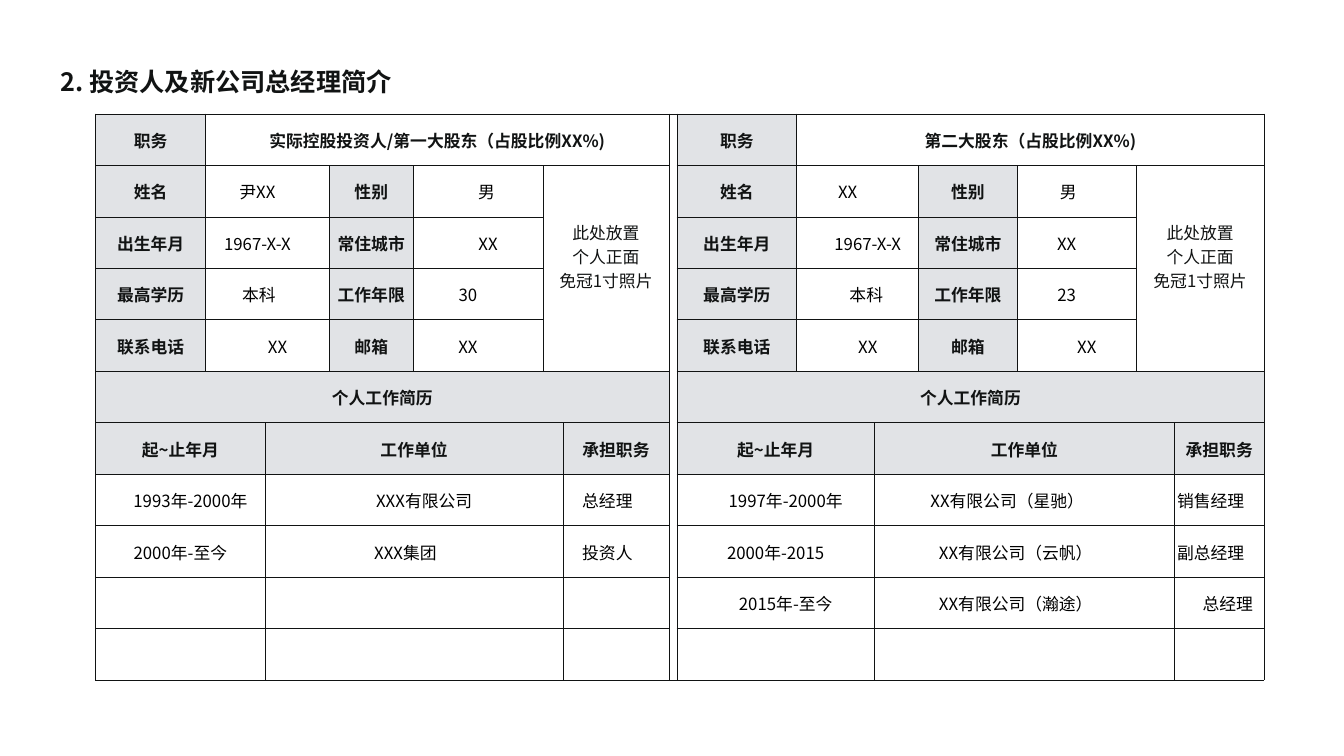
from lxml import etree
from pptx import Presentation
from pptx.dml.color import RGBColor
from pptx.enum.text import MSO_ANCHOR, PP_ALIGN
from pptx.oxml.ns import qn
from pptx.util import Inches, Pt

MIDDLE = MSO_ANCHOR.MIDDLE
LEFT, CENTER = PP_ALIGN.LEFT, PP_ALIGN.CENTER
INK = RGBColor(0x11, 0x13, 0x13)
BLACK = RGBColor(0, 0, 0)
WHITE = RGBColor(255, 255, 255)
GREY = RGBColor(0xE1, 0xE3, 0xE6)
FONT = "Noto Sans CJK SC"

TITLE = "2. 投资人及新公司总经理简介"
PHOTO_NOTE = ["此处放置", "个人正面", "免冠1寸照片"]
FIELD_LABELS = [("姓名", "性别"), ("出生年月", "常住城市"), ("最高学历", "工作年限"), ("联系电话", "邮箱")]
CAREER_TITLE = "个人工作简历"
CAREER_HEADERS = ["起~止年月", "工作单位", "承担职务"]

PEOPLE = [
    {
        "role": "实际控股投资人/第一大股东（占股比例XX%)",
        "fields": [
            (("尹XX", -0.2), ("男", 0.17)),
            (("1967-X-X", -0.2), ("XX", 0.2)),
            (("本科", -0.17), ("30", -0.2)),
            (("XX", 0.2), ("XX", -0.2)),
        ],
        "career": [
            (("1993年-2000年", 0.2), ("XXX有限公司", 0.2), ("总经理", -0.17)),
            (("2000年-至今", 0), ("XXX集团", -0.17), ("投资人", -0.17)),
        ],
    },
    {
        "role": "第二大股东（占股比例XX%)",
        "fields": [
            (("XX", -0.2), ("男", -0.17)),
            (("1967-X-X", 0.2), ("XX", -0.2)),
            (("本科", 0.17), ("23", -0.2)),
            (("XX", 0.2), ("XX", 0.2)),
        ],
        "career": [
            (("1997年-2000年", 0.2), ("XX有限公司（星驰）", -0.34), ("销售经理", -0.17)),
            (("2000年-2015", 0), ("XX有限公司（云帆）", -0.17), ("副总经理", -0.17)),
            (("2015年-至今", 0.2), ("XX有限公司（瀚途）", -0.17), ("总经理", 0.17)),
        ],
    },
]

TITLE_BOX = (0.5, 0.54, 7.28, 0.54)
TABLE_BOX = (0.95, 1.13, 11.59, 5.62)
COLUMN_WIDTHS = [1.09, 0.59, 0.64, 0.83, 1.29, 0.2, 1.05, 0.08, 1.19, 0.77, 0.44, 0.98, 1.18, 0.38, 0.89]
ROW_COUNT = 11
HALF_COLUMNS = 7
CAREER_SPANS = [(0, 2), (2, 4), (6, 1)]
CAREER_ROW = 5
CELL_INSET = 0.01
LABEL = {"size": Pt(12), "bold": True, "color": INK}
VALUE = {"size": Pt(12), "bold": False, "color": BLACK}
NOTE = {"size": Pt(12), "bold": False, "color": INK}
HEADING = {"size": Pt(18), "bold": True, "color": INK}


def write_lines(frame, lines, style, align):
    for index, line in enumerate(lines):
        paragraph = frame.paragraphs[0] if index == 0 else frame.add_paragraph()
        paragraph.alignment = align
        run = paragraph.add_run()
        run.text = line
        run.font.name = FONT
        for name, value in style.items():
            if name == "color":
                run.font.color.rgb = value
            else:
                setattr(run.font, name, value)
        etree.SubElement(run.font._element, qn("a:ea"), typeface=FONT)


def draw_borders(cell):
    properties = cell._tc.get_or_add_tcPr()
    for index, side in enumerate(("lnL", "lnR", "lnT", "lnB")):
        line = etree.Element(qn(f"a:{side}"), w=str(Pt(0.5)))
        fill = etree.SubElement(line, qn("a:solidFill"))
        etree.SubElement(fill, qn("a:srgbClr"), val=str(INK))
        properties.insert(index, line)


def put(table, row, column, lines, style, columns=1, rows=1, fill=WHITE, indent=0, bottom=0):
    cell = table.cell(row, column)
    if columns * rows > 1:
        cell.merge(table.cell(row + rows - 1, column + columns - 1))
    cell.fill.solid()
    cell.fill.fore_color.rgb = fill
    cell.margin_left = Inches(CELL_INSET + max(indent, 0))
    cell.margin_right = Inches(CELL_INSET + max(-indent, 0))
    cell.margin_bottom = Inches(bottom)
    write_lines(cell.text_frame, lines, style, CENTER)


def fill_half(table, first, person):
    put(table, 0, first, ["职务"], LABEL, fill=GREY)
    put(table, 0, first + 1, [person["role"]], LABEL, columns=6)
    for row, (labels, values) in enumerate(zip(FIELD_LABELS, person["fields"]), 1):
        for offset, span, label, (text, indent) in zip((0, 3), (2, 1), labels, values):
            put(table, row, first + offset, [label], LABEL, fill=GREY)
            put(table, row, first + offset + 1, [text], VALUE, columns=span, indent=indent)
    put(table, 1, first + 5, PHOTO_NOTE, NOTE, columns=2, rows=4, bottom=0.25)
    put(table, CAREER_ROW, first, [CAREER_TITLE], LABEL, columns=HALF_COLUMNS, fill=GREY)
    for index, (offset, span) in enumerate(CAREER_SPANS):
        column = first + offset
        put(table, CAREER_ROW + 1, column, [CAREER_HEADERS[index]], LABEL, columns=span, fill=GREY)
        for row in range(CAREER_ROW + 2, ROW_COUNT):
            entry = row - CAREER_ROW - 2
            if entry < len(person["career"]):
                text, indent = person["career"][entry][index]
                put(table, row, column, [text], VALUE, columns=span, indent=indent)
            else:
                put(table, row, column, [], VALUE, columns=span)


def main():
    presentation = Presentation()
    presentation.slide_width, presentation.slide_height = Inches(13.33), Inches(7.5)
    slide = presentation.slides.add_slide(presentation.slide_layouts[5])

    title = slide.shapes.title
    title.left, title.top, title.width, title.height = map(Inches, TITLE_BOX)
    outline = etree.SubElement(title._element.spPr, qn("a:prstGeom"), prst="roundRect")
    etree.SubElement(outline, qn("a:avLst"))
    title.text_frame.vertical_anchor = MIDDLE
    write_lines(title.text_frame, [TITLE], HEADING, LEFT)

    frame = slide.shapes.add_table(ROW_COUNT, len(COLUMN_WIDTHS), *map(Inches, TABLE_BOX))
    table = frame.table
    table.first_row = table.horz_banding = False
    scale = TABLE_BOX[2] / sum(COLUMN_WIDTHS)
    for column, width in zip(table.columns, COLUMN_WIDTHS):
        column.width = Inches(width * scale)
    for row in table.rows:
        row.height = Inches(TABLE_BOX[3] / ROW_COUNT)
    for cell in table.iter_cells():
        cell.vertical_anchor = MIDDLE
        cell.margin_left = cell.margin_right = cell.margin_top = Inches(CELL_INSET)
        cell.margin_bottom = 0
        draw_borders(cell)

    for half, person in enumerate(PEOPLE):
        fill_half(table, half * (HALF_COLUMNS + 1), person)
    put(table, 0, HALF_COLUMNS, [], VALUE, rows=ROW_COUNT)
    presentation.save("out.pptx")


if __name__ == "__main__":
    main()
